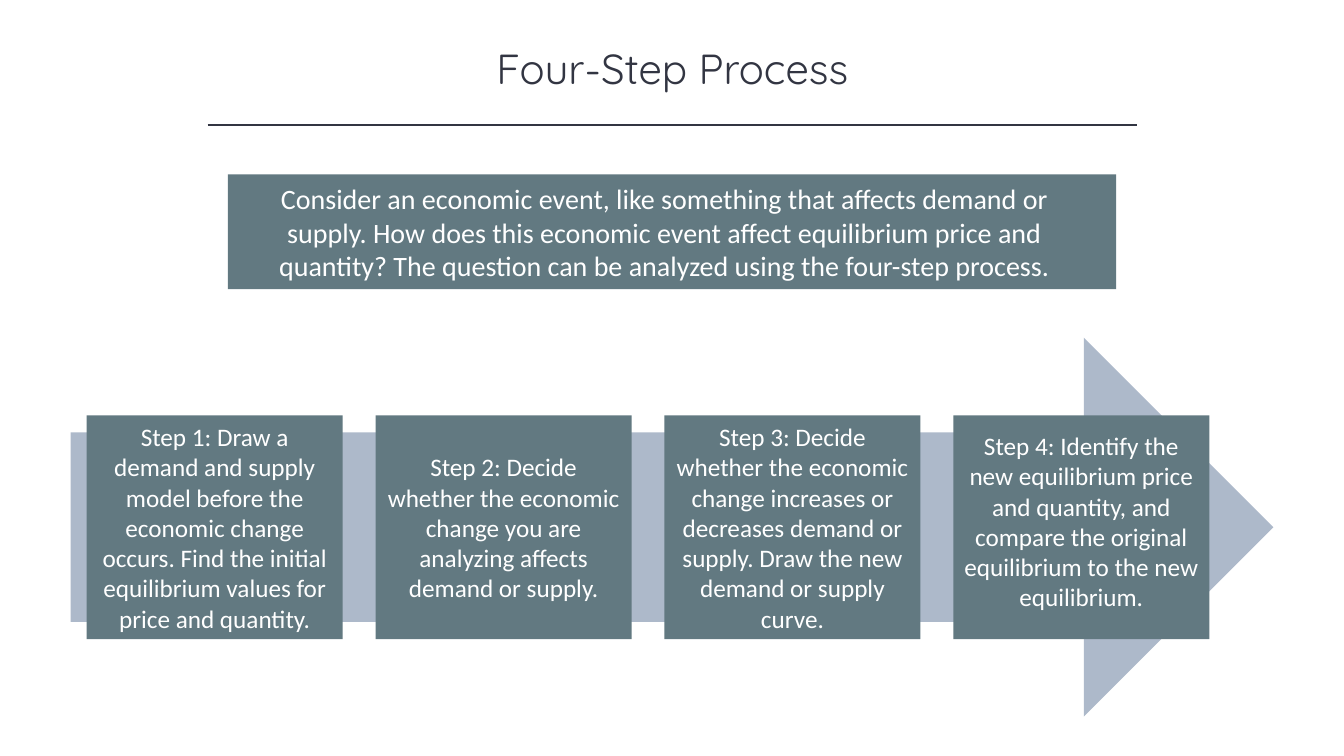
from lxml import etree
from pptx import Presentation
from pptx.dml.color import RGBColor
from pptx.enum.shapes import MSO_CONNECTOR, MSO_SHAPE
from pptx.enum.text import MSO_ANCHOR, PP_ALIGN
from pptx.oxml.ns import qn
from pptx.util import Inches, Pt

RECTANGLE = MSO_SHAPE.RECTANGLE
RIGHT_ARROW = MSO_SHAPE.RIGHT_ARROW
STRAIGHT = MSO_CONNECTOR.STRAIGHT
MIDDLE = MSO_ANCHOR.MIDDLE
CENTER = PP_ALIGN.CENTER

COLORS = {"ink": "323542", "panel": "627981", "arrow": "ADB9CA", "light": "FFFFFF"}
TITLE = "Four-Step Process"
INTRO = (
    "Consider an economic event, like something that affects demand or supply. "
    "How does this economic event affect equilibrium price and quantity? "
    "The question can be analyzed using the four-step process."
)
STEPS = [
    ("Step 1: Draw a demand and supply model before the economic change occurs. "
     "Find the initial equilibrium values for price and quantity.", {}),
    ("Step 2: Decide whether the economic change you are analyzing affects "
     "demand or supply.", {}),
    ("Step 3: Decide whether the economic change increases or decreases demand "
     "or supply. Draw the new demand or supply curve.", {}),
    ("Step 4: Identify the new equilibrium price and quantity, and compare the "
     "original equilibrium to the new equilibrium.", {"margin_bottom": Inches(0.17)}),
]


def color(name):
    """Return the named palette color."""
    return RGBColor.from_string(COLORS[name])


def write_text(shape, text, size, font_name, color_name, frame_format):
    """Write one centered paragraph into a shape."""
    frame = shape.text_frame
    settings = {"word_wrap": True, "vertical_anchor": MIDDLE, **frame_format}
    for name, value in settings.items():
        setattr(frame, name, value)
    paragraph = frame.paragraphs[0]
    paragraph.alignment = CENTER
    run = paragraph.add_run()
    run.text = text
    for name, value in {"size": Pt(size), "name": font_name}.items():
        setattr(run.font, name, value)
    run.font.color.rgb = color(color_name)


def add_filled_shape(slide, kind, box, color_name):
    """Add a flat preset shape without outline."""
    shape = slide.shapes.add_shape(kind, *map(Inches, box))
    shape.shadow.inherit = False
    shape.fill.solid()
    shape.fill.fore_color.rgb = color(color_name)
    shape.line.fill.background()
    return shape


def add_panel(slide, box, text, size, frame_format):
    """Add a dark rectangle with light centered text."""
    panel = add_filled_shape(slide, RECTANGLE, box, "panel")
    write_text(panel, text, size, "Calibri", "light", frame_format)


def add_header(slide, left, top, width, height):
    """Add the title and the rule below it."""
    title = slide.shapes.add_textbox(*map(Inches, (left, top, width, height)))
    write_text(title, TITLE, 30, "Quicksand", "ink", {})
    rule_top = Inches(top + 0.87)
    rule = slide.shapes.add_connector(
        STRAIGHT, Inches(left + 0.39), rule_top, Inches(left + width - 0.39), rule_top)
    rule.line.color.rgb = color("ink")
    rule.line.width = Pt(1)
    etree.SubElement(rule._element.spPr, qn("a:effectLst"))


def add_process(slide, left, top, width, height):
    """Add the arrow and the evenly spaced steps across it."""
    add_filled_shape(slide, RIGHT_ARROW, (left, top, width, height), "arrow")
    step_width, step_height, pitch = 2.54, 2.22, 2.865
    step_top = top + (height - step_height) / 2
    for index, (text, frame_format) in enumerate(STEPS):
        box = (left + 0.16 + index * pitch, step_top, step_width, step_height)
        add_panel(slide, box, text, 18, frame_format)


def main():
    """Build and save the presentation."""
    presentation = Presentation()
    presentation.slide_width = Inches(13.33)
    presentation.slide_height = Inches(7.5)
    slide = presentation.slides.add_slide(presentation.slide_layouts[6])
    add_header(slide, 1.67, 0.37, 10, 0.61)
    intro_margins = {"margin_left": Inches(0.16), "margin_right": Inches(0.31)}
    add_panel(slide, (2.26, 1.73, 8.81, 1.14), INTRO, 20, intro_margins)
    add_process(slide, 0.7, 3.35, 11.93, 3.76)
    presentation.save("out.pptx")


if __name__ == "__main__":
    main()
